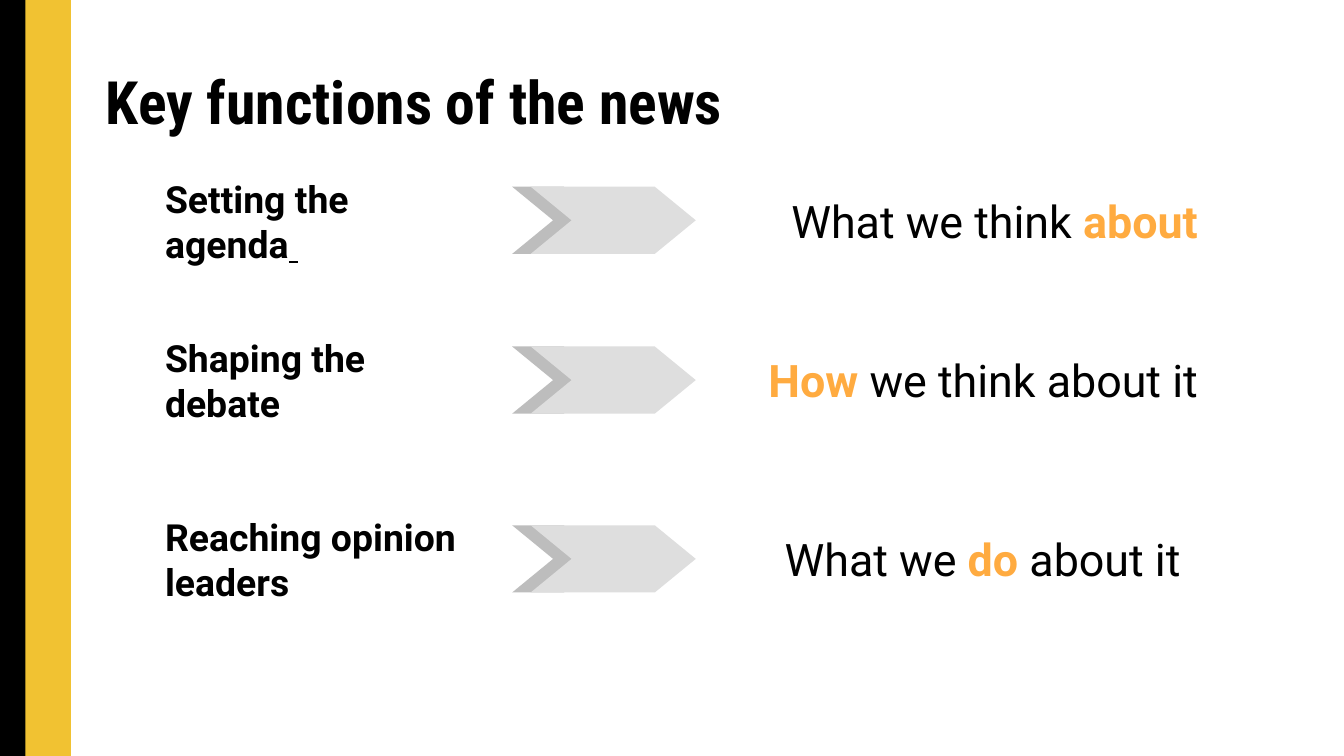
import pptx
import pptx.util
import pptx.dml.color
import pptx.enum.shapes
import pptx.enum.text
from dataclasses import dataclass

Cm = pptx.util.Cm
Shapes = pptx.enum.shapes.MSO_SHAPE
Align = pptx.enum.text.PP_ALIGN
AutoSize = pptx.enum.text.MSO_AUTO_SIZE


@dataclass(frozen=True)
class Theme:
    black: str = "000000"
    yellow: str = "F1C232"
    orange: str = "FFAB40"
    dark_gray: str = "BDBDBD"
    light_gray: str = "DEDEDE"
    heading_font: str = "Roboto Condensed"
    body_font: str = "Roboto"
    title_size: int = 32
    label_size: int = 20
    answer_size: int = 24


theme = Theme()


def write(paragraph, text, size, font=theme.body_font, color=theme.black, bold=False, underline=False):
    run = paragraph.add_run()
    run.text = text
    run.font.name = font
    run.font.size = pptx.util.Pt(size)
    run.font.bold = bold
    run.font.underline = underline
    run.font.color.rgb = pptx.dml.color.RGBColor.from_string(color)


def add_filled(shapes, kind, left, top, width, height, color):
    shape = shapes.add_shape(kind, left, top, width, height)
    shape.shadow.inherit = False
    shape.fill.solid()
    shape.fill.fore_color.rgb = pptx.dml.color.RGBColor.from_string(color)
    shape.line.fill.background()
    return shape


presentation = pptx.Presentation()
presentation.slide_width = Cm(25.4)
presentation.slide_height = Cm(14.29)
slide = presentation.slides.add_slide(presentation.slide_layouts[5])

for left, width, color in [(0, 0.6, theme.black), (0.48, 0.86, theme.yellow)]:
    add_filled(slide.shapes, Shapes.RECTANGLE, Cm(left), 0, Cm(width), presentation.slide_height, color)

title = slide.shapes.title
title.left, title.top, title.width, title.height = Cm(1.75), Cm(0.84), Cm(23.04), Cm(1.6)
frame = title.text_frame
frame.auto_size = AutoSize.NONE
frame.vertical_anchor = pptx.enum.text.MSO_ANCHOR.TOP
frame.margin_left = frame.margin_right = Cm(0.25)
frame.margin_top, frame.margin_bottom = Cm(0.38), 0
frame.paragraphs[0].alignment = Align.LEFT
write(frame.paragraphs[0], "Key functions of the news", theme.title_size, font=theme.heading_font, bold=True)

functions = [
    (3.2, [("Setting the agenda", False), (" ", True)],
     14.2, 8.69, [("What we think ", False), ("about", True)]),
    (6.22, [("Shaping the debate", False)],
     14.1, 8.79, [("How ", True), ("we think about it", False)]),
    (9.6, [("Reaching opinion leaders", False)],
     13.92, 8.64, [("What we ", False), ("do", True), (" about it", False)]),
]

for top, label_runs, answer_left, answer_width, answer_runs in functions:
    row = slide.shapes.add_group_shape()
    middle_top = Cm(top + 0.33)

    label = row.shapes.add_textbox(Cm(2.87), Cm(top), Cm(6.35), Cm(1.96))
    answer = row.shapes.add_textbox(Cm(answer_left), middle_top, Cm(answer_width), Cm(1.27))
    for box in (label, answer):
        box.text_frame.word_wrap = True
        box.text_frame.auto_size = AutoSize.SHAPE_TO_FIT_TEXT

    for text, underline in label_runs:
        write(label.text_frame.paragraphs[0], text, theme.label_size, bold=True, underline=underline)

    answer.text_frame.paragraphs[0].alignment = Align.RIGHT
    for text, strong in answer_runs:
        color = theme.orange if strong else theme.black
        write(answer.text_frame.paragraphs[0], text, theme.answer_size, color=color, bold=strong)

    for left, width, color in [(9.68, 1.75, theme.dark_gray), (10.03, 3.12, theme.light_gray)]:
        chevron = add_filled(row.shapes, Shapes.CHEVRON, Cm(left), middle_top, Cm(width), Cm(1.27), color)
        chevron.adjustments[0] = 0.61

presentation.save("out.pptx")
